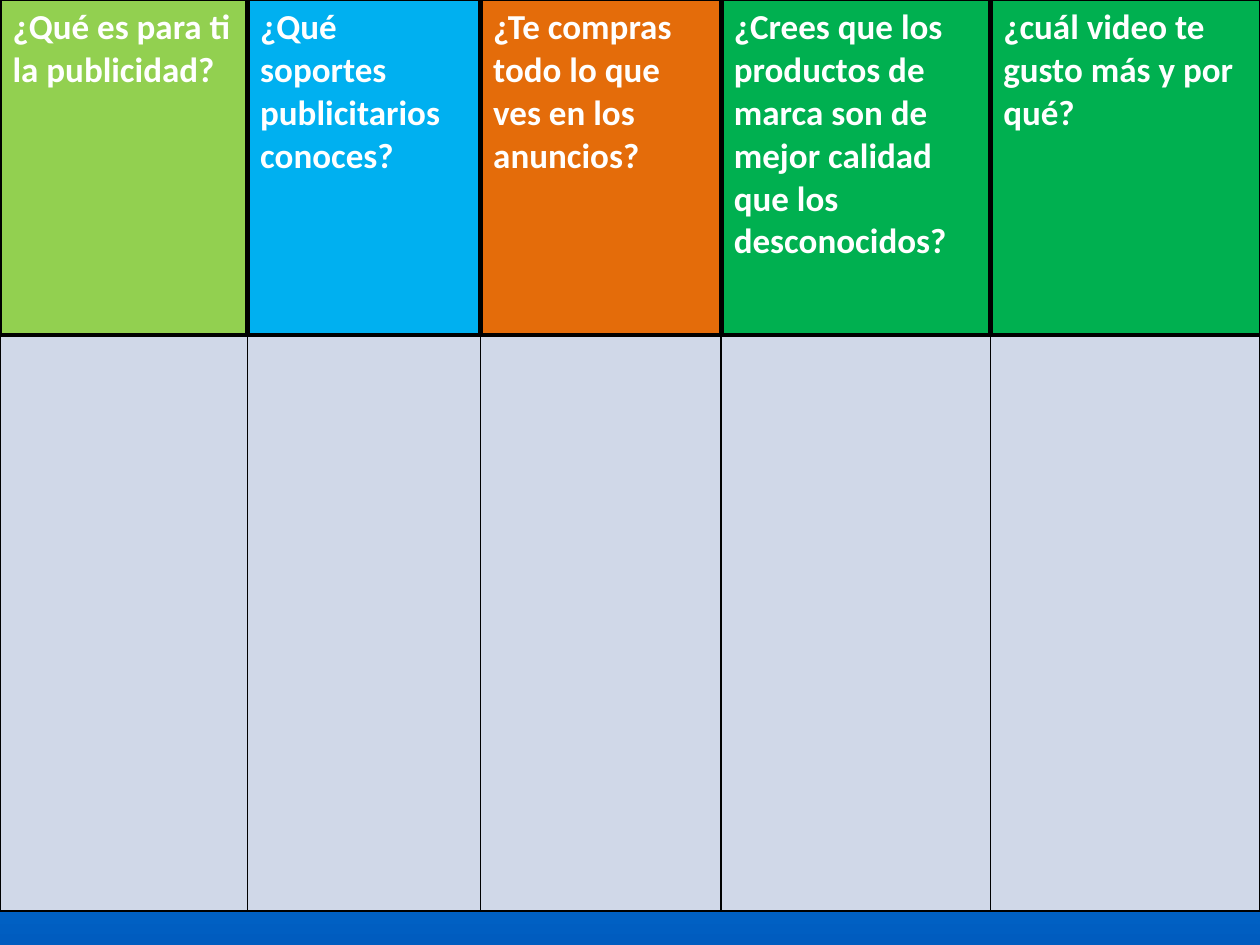
from dataclasses import dataclass

from lxml.etree import SubElement
from pptx import Presentation
from pptx.dml.color import RGBColor
from pptx.oxml import parse_xml
from pptx.oxml.ns import nsdecls, qn
from pptx.util import Pt

HUES = {
    "lime": "92D050", "sky": "00B0F0", "orange": "E46C0A", "green": "00B050",
    "body": "D0D8E8", "text": "FFFFFF", "line": "000000",
}
FADE = {0: "03D4A8", 25: "21D6E0", 75: "0087E6", 100: "005CBF"}
THIN, THICK = 1, 3
HEAD, BODY = 191.5, 329


@dataclass
class Column:
    text: str
    hue: str
    width: float


COLUMNS = [
    Column("¿Qué es para ti la publicidad?", "lime", 141.5),
    Column("¿Qué soportes\npublicitarios\nconoces?", "sky", 133.2),
    Column("¿Te compras\ntodo lo que ves en los\nanuncios?", "orange", 137.5),
    Column("¿Crees que los productos de marca son de mejor calidad "
           "que los desconocidos?", "green", 154),
    Column("¿cuál video te gusto más y por qué?", "green", 153.8),
]


def paint(slide) -> None:
    """Fill the background with a gradient running downwards."""
    fill = slide.background.fill
    fill.gradient()
    fill.gradient_angle = 270
    stops = slide.element.find(".//" + qn("a:gsLst"))
    for stop in list(stops):
        stops.remove(stop)
    for place, hue in FADE.items():
        stop = SubElement(stops, qn("a:gs"), pos=str(place * 1000))
        SubElement(stop, qn("a:srgbClr"), val=hue)


def style(cell, hue: str, left: float, right: float,
          top: float, bottom: float) -> None:
    """Set the fill and the four border widths of a cell."""
    cell.fill.solid()
    cell.fill.fore_color.rgb = RGBColor.from_string(HUES[hue])
    sides = {"L": left, "R": right, "T": top, "B": bottom}
    for spot, (side, width) in enumerate(sides.items()):
        line = parse_xml(
            f'<a:ln{side} {nsdecls("a")} w="{Pt(width)}"><a:solidFill>'
            f'<a:srgbClr val="{HUES["line"]}"/></a:solidFill></a:ln{side}>')
        cell._tc.get_or_add_tcPr().insert(spot, line)


def write(cell, text: str) -> None:
    cell.text = text
    for para in cell.text_frame.paragraphs:
        font = para.font
        font.name, font.size, font.bold = "Calibri", Pt(20), True
        font.color.rgb = RGBColor.from_string(HUES["text"])


def main() -> None:
    deck = Presentation()
    deck.slide_width, deck.slide_height = Pt(720), Pt(540)
    slide = deck.slides.add_slide(deck.slide_layouts[6])
    paint(slide)

    # Question table: coloured headings above empty answer cells
    table = slide.shapes.add_table(
        2, len(COLUMNS), 0, 0, Pt(720), Pt(HEAD + BODY)).table
    table.rows[0].height, table.rows[1].height = Pt(HEAD), Pt(BODY)
    for i, col in enumerate(COLUMNS):
        table.columns[i].width = Pt(col.width)
        head, body = table.cell(0, i), table.cell(1, i)
        last = i == len(COLUMNS) - 1
        write(head, col.text)
        style(head, col.hue, THICK, THIN if last else THICK, THIN, THICK)
        style(body, "body", THIN, THIN, THICK, THIN)

    deck.save("out.pptx")


if __name__ == "__main__":
    main()
